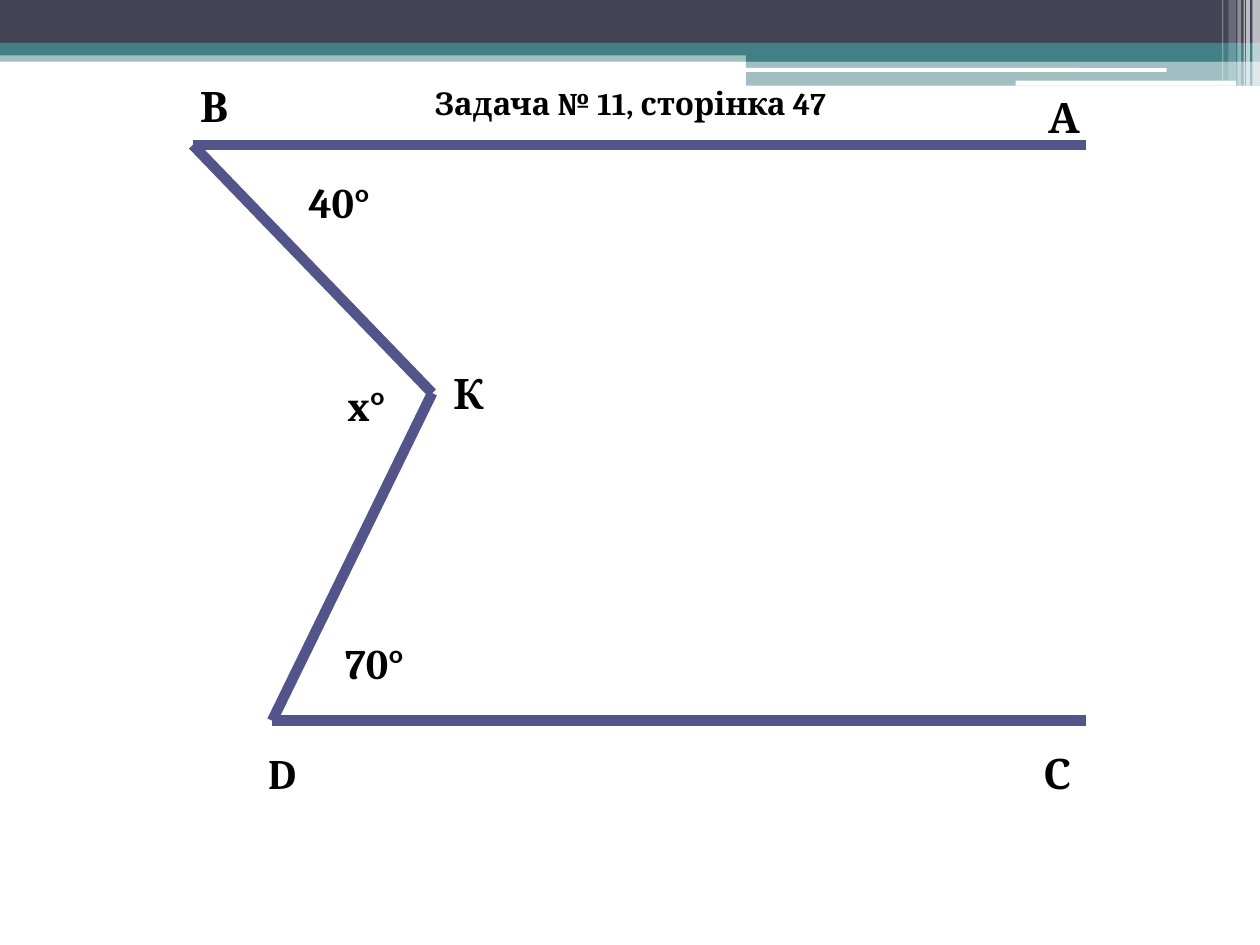
import dataclasses

import pptx
import pptx.dml.color
import pptx.enum.shapes
import pptx.enum.text
import pptx.oxml.ns
import pptx.util
from lxml import etree

Inches = pptx.util.Inches
Shape = pptx.enum.shapes.MSO_SHAPE
Fit = pptx.enum.text.MSO_AUTO_SIZE
qn = pptx.oxml.ns.qn

NAVY, TEAL, WHITE = "424456", "438086", "FFFFFF"
VIOLET, BLACK = "53548A", "000000"
FONT = "Cambria"


@dataclasses.dataclass
class Bar:
    left: float
    top: float
    width: float
    height: float
    fill: str
    alpha: int = 100
    round: bool = False


@dataclasses.dataclass
class Label:
    text: str
    left: float
    top: float
    width: float
    height: float = 0.51
    size: int = 24
    wrap: bool = False


BARS = [
    Bar(0, 0.4, 10, 0.09, TEAL, 50),
    Bar(0, 0, 10, 0.34, NAVY),
    Bar(0, 0.34, 10, 0.1, TEAL),
    Bar(5.92, 0.39, 4.08, 0.1, TEAL),
    Bar(5.92, 0.48, 4.08, 0.2, TEAL, 50),
    Bar(5.91, 0.54, 3.35, 0.03, WHITE, round=True),
    Bar(8.06, 0.64, 1.75, 0.04, WHITE, round=True),
    Bar(9.94, 0, 0.06, 0.68, WHITE, 65),
    Bar(9.89, 0, 0.03, 0.68, WHITE, 65),
    Bar(9.87, 0, 0.01, 0.68, WHITE, 60),
    Bar(9.82, 0, 0.03, 0.68, WHITE, 40),
    Bar(9.75, 0, 0.06, 0.64, WHITE, 20),
    Bar(9.7, 0, 0.01, 0.64, WHITE, 30),
]

# Corners of the broken line A-B-K-D-C
POINTS = [(8.62, 1.15), (1.53, 1.15), (3.43, 3.12), (2.16, 5.72), (8.62, 5.72)]

LABELS = [
    Label("А", 8.22, 0.68, 0.45),
    Label("В", 1.49, 0.59, 0.45),
    Label("К", 3.5, 2.87, 0.41),
    Label("D", 2.03, 5.88, 0.45),
    Label("С", 8.18, 5.88, 0.45),
    Label("40°", 2.35, 1.35, 0.71),
    Label("70°", 2.64, 5.01, 0.71),
    Label("x°", 2.66, 2.96, 0.52),
    Label("Задача № 11, сторінка 47", 3.35, 0.62, 4.25, 0.4, 18, True),
]


def tint(code: str) -> pptx.dml.color.RGBColor:
    """Turn a hex string into a colour."""
    return pptx.dml.color.RGBColor.from_string(code)


def draw_bar(slide, bar: Bar) -> None:
    kind = Shape.ROUNDED_RECTANGLE if bar.round else Shape.RECTANGLE
    shape = slide.shapes.add_shape(
        kind, Inches(bar.left), Inches(bar.top), Inches(bar.width), Inches(bar.height)
    )
    shape.shadow.inherit = False
    shape.line.fill.background()
    shape.fill.solid()
    shape.fill.fore_color.rgb = tint(bar.fill)
    if bar.alpha < 100:
        color = shape.fill._xPr.find(qn("a:solidFill"))[0]
        etree.SubElement(color, qn("a:alpha")).set("val", str(bar.alpha * 1000))


def draw_line(slide, start: tuple[float, float], end: tuple[float, float]) -> None:
    line = slide.shapes.add_connector(
        pptx.enum.shapes.MSO_CONNECTOR.STRAIGHT, *map(Inches, start + end)
    )
    line.line.color.rgb = tint(VIOLET)
    line.line.width = pptx.util.Pt(6)
    etree.SubElement(line._element.spPr, qn("a:effectLst"))


def draw_label(slide, label: Label) -> None:
    box = slide.shapes.add_textbox(
        Inches(label.left), Inches(label.top), Inches(label.width), Inches(label.height)
    )
    frame = box.text_frame
    frame.word_wrap = label.wrap
    frame.auto_size = Fit.SHAPE_TO_FIT_TEXT
    run = frame.paragraphs[0].add_run()
    run.text = label.text
    run.font.name = FONT
    run.font.size = pptx.util.Pt(label.size)
    run.font.bold = True
    run.font.color.rgb = tint(BLACK)


def main() -> None:
    deck = pptx.Presentation()
    deck.slide_width, deck.slide_height = Inches(10), Inches(7.5)
    slide = deck.slides.add_slide(deck.slide_layouts[6])
    for bar in BARS:
        draw_bar(slide, bar)
    for start, end in zip(POINTS, POINTS[1:]):
        draw_line(slide, start, end)
    for label in LABELS:
        draw_label(slide, label)
    deck.save("out.pptx")


if __name__ == "__main__":
    main()
